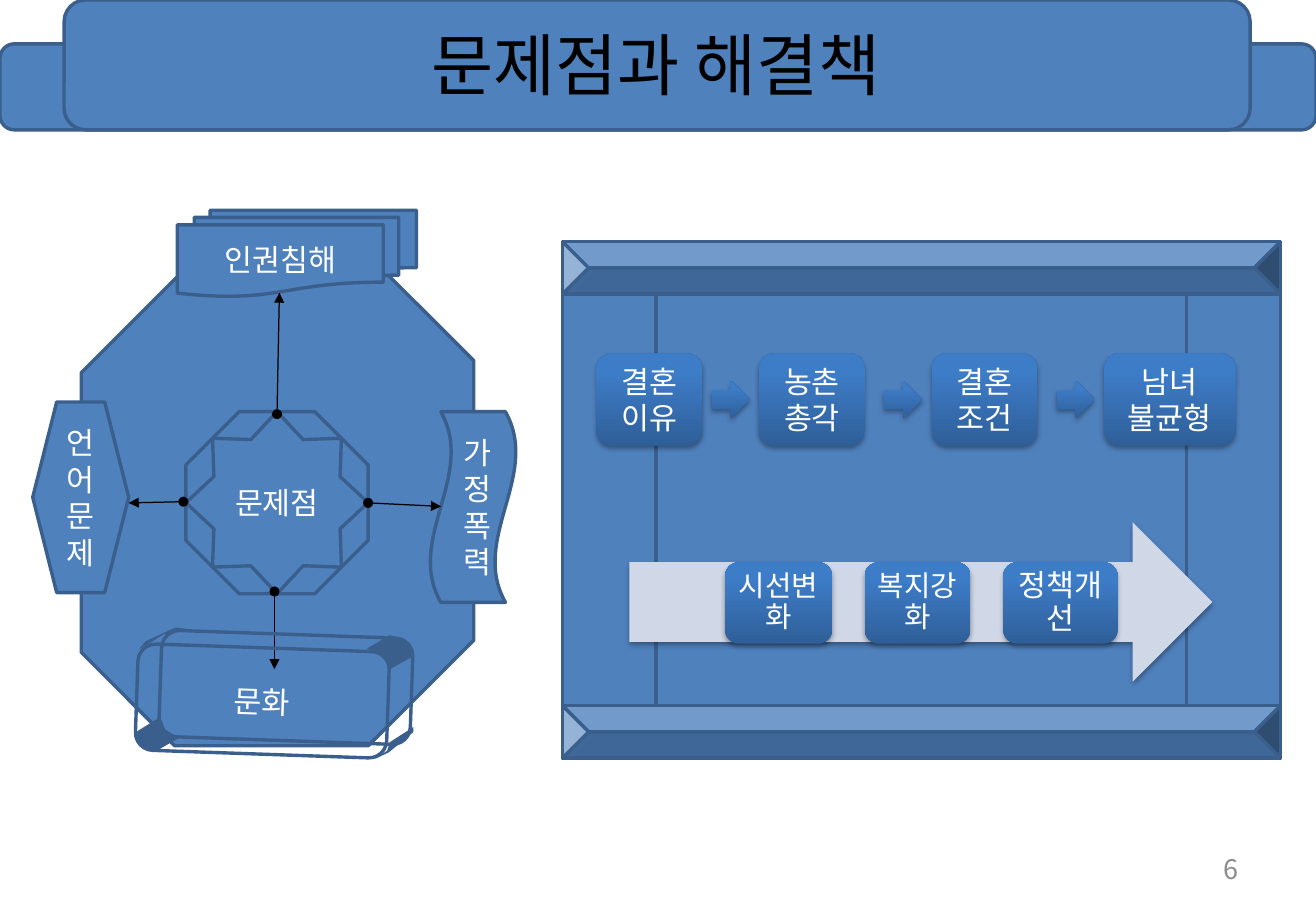
from dataclasses import dataclass
from typing import Optional

from lxml.etree import SubElement
from pptx import Presentation
from pptx.dml.color import RGBColor
from pptx.enum.shapes import MSO_CONNECTOR, MSO_SHAPE
from pptx.enum.text import MSO_ANCHOR, PP_ALIGN
from pptx.oxml.ns import qn
from pptx.shapes.autoshape import Shape
from pptx.shapes.shapetree import SlideShapes
from pptx.util import Pt


@dataclass(frozen=True)
class Theme:
    font: str = "Noto Sans CJK KR"
    blue: str = "4F81BD"
    edge: str = "3A5F8C"
    card_dark: str = "2F5F99"
    card_light: str = "3D7CC7"
    pale: str = "D0D8E8"
    black: str = "000000"
    white: str = "FFFFFF"
    grey: str = "8C8C8C"
    title_size: float = 40
    body_size: float = 18
    small_size: float = 17
    number_size: float = 16
    edge_width: float = 2
    arrow_width: float = 0.75


@dataclass(frozen=True)
class Box:
    left: float
    top: float
    width: float
    height: float


@dataclass(frozen=True)
class Block:
    kind: MSO_SHAPE
    box: Box
    text: str = ""
    adjustments: tuple[float, ...] = ()
    rotation: float = 0
    vertical: Optional[str] = None
    filled: bool = True


@dataclass(frozen=True)
class Card:
    left: float
    width: float
    text: str
    size: float = 18


THEME = Theme()
BANNER = Box(38, 0, 703, 77)
STEP_TOP, STEP_HEIGHT = 209.5, 54.7
REMEDY_TOP, REMEDY_HEIGHT = 333.4, 48.2
STEP_ARROW = 22.5
PANEL = Box(333.4, 143.3, 425.5, 306)
BEAM_HEIGHT = 31

PROBLEM_BLOCKS = (
    Block(MSO_SHAPE.ROUNDED_RECTANGLE, Box(0, 26, 780, 51)),
    Block(MSO_SHAPE.ROUNDED_RECTANGLE, BANNER),
    Block(MSO_SHAPE.SNIP_2_DIAG_RECTANGLE, Box(48.2, 158.4, 232.6, 283.7),
          adjustments=(0.269, 0.238)),
    Block(MSO_SHAPE.HEXAGON, Box(19.4, 238.3, 56.9, 113), "언어문제"),
    Block(MSO_SHAPE.FLOWCHART_MULTIDOCUMENT, Box(105.1, 124.6, 141.8, 51.1), "인권침해"),
    Block(MSO_SHAPE.WAVE, Box(223.9, 275, 113, 51.1), "가정폭력",
          rotation=90, vertical="vert270"),
    Block(MSO_SHAPE.OCTAGON, Box(110.2, 244, 108, 108)),
    Block(MSO_SHAPE.STAR_8_POINT, Box(110.2, 244, 108, 108), "문제점"),
)
PROBLEM_ARROWS = (
    ((164.2, 245.5), (165.6, 173.5)),
    ((108.7, 297.4), (76.3, 298.1)),
    ((218.2, 298.1), (261.4, 300.2)),
    ((162.7, 350.6), (162.7, 396.7)),
)
CULTURE_FRAMES = (
    Block(MSO_SHAPE.ROUNDED_RECTANGLE, Box(95, 376, 149, 63), rotation=2, filled=False),
    Block(MSO_SHAPE.ROUNDED_RECTANGLE, Box(81, 384, 149, 63), "문화", rotation=2, filled=False),
)
CULTURE_CORNERS = (
    ((217.5, 384.5), (231, 376.5), (240, 379.5), (245, 389), (230.5, 397), (227.5, 389)),
    ((80.5, 434), (95, 425), (98, 432.5), (106, 437.5), (92, 445.5), (83.5, 442)),
    ((222, 450), (230.5, 446), (245, 434), (245, 431), (231, 440), (229.5, 445)),
    ((82, 385), (86.5, 380), (104, 372), (112.5, 373), (97, 376), (89, 381)),
)
PANEL_BLOCKS = (
    Block(MSO_SHAPE.RECTANGLE, PANEL),
    Block(MSO_SHAPE.RECTANGLE, Box(388.8, 144, 314.6, 304)),
    *(Block(MSO_SHAPE.BEVEL, Box(PANEL.left, top, PANEL.width, BEAM_HEIGHT), adjustments=(0.5,))
      for top in (PANEL.top, PANEL.top + PANEL.height - BEAM_HEIGHT)),
)
REMEDIES = (
    Card(429.8, 63.4, "시선변화", THEME.small_size),
    Card(512.6, 62.6, "복지강화", THEME.small_size),
    Card(594.7, 67.7, "정책개선"),
)
STEPS = (
    Card(353.5, 62.6, "결혼\n이유"),
    Card(450, 62.6, "농촌\n총각"),
    Card(552.2, 62.6, "결혼\n조건"),
    Card(654.5, 77.8, "남녀\n불균형"),
)


def color(value: str) -> RGBColor:
    return RGBColor.from_string(value)


def write(shape: Shape, text: str, size: float = THEME.body_size, ink: str = THEME.white,
          align: PP_ALIGN = PP_ALIGN.CENTER, spacing: float = 1.0) -> None:
    frame = shape.text_frame
    frame.word_wrap = True
    frame.vertical_anchor = MSO_ANCHOR.MIDDLE
    for index, line in enumerate(text.split("\n")):
        paragraph = frame.add_paragraph() if index else frame.paragraphs[0]
        paragraph.alignment = align
        paragraph.line_spacing = spacing
        run = paragraph.add_run()
        run.text = line
        run.font.size = Pt(size)
        run.font.name = THEME.font
        run.font.color.rgb = color(ink)
        SubElement(run.font._element, qn("a:ea"), typeface=THEME.font)


def add_preset(shapes: SlideShapes, kind: MSO_SHAPE, box: Box) -> Shape:
    shape = shapes.add_shape(kind, Pt(box.left), Pt(box.top), Pt(box.width), Pt(box.height))
    shape.shadow.inherit = False
    return shape


def add_block(shapes: SlideShapes, block: Block) -> None:
    shape = add_preset(shapes, block.kind, block.box)
    for index, value in enumerate(block.adjustments):
        shape.adjustments[index] = value
    shape.rotation = block.rotation
    if block.filled:
        shape.fill.solid()
        shape.fill.fore_color.rgb = color(THEME.blue)
    else:
        shape.fill.background()
    shape.line.color.rgb = color(THEME.edge)
    shape.line.width = Pt(THEME.edge_width)
    if block.text:
        write(shape, block.text)
    if block.vertical:
        shape.text_frame._txBody.bodyPr.set("vert", block.vertical)


def add_raised(shapes: SlideShapes, kind: MSO_SHAPE, box: Box, flat: Optional[str] = None) -> Shape:
    """Borderless shape with a soft shadow below; a gradient unless a flat colour is given."""
    shape = add_preset(shapes, kind, box)
    shape.line.fill.background()
    if flat:
        shape.fill.solid()
        shape.fill.fore_color.rgb = color(flat)
    else:
        shape.fill.gradient()
        shape.fill.gradient_angle = 90
        stops = zip(shape.fill.gradient_stops, (0, 0.8), (THEME.card_dark, THEME.card_light))
        for stop, position, tint in stops:
            stop.position = position
            stop.color.rgb = color(tint)
    effects = shape._element.spPr.find(qn("a:effectLst"))
    shadow = SubElement(effects, qn("a:outerShdw"), blurRad=str(Pt(3.1)), dist=str(Pt(1.8)),
                        dir="5400000", rotWithShape="0")
    shade = SubElement(shadow, qn("a:srgbClr"), val=THEME.black)
    SubElement(shade, qn("a:alpha"), val="35000")
    return shape


def add_problem_arrow(shapes: SlideShapes, start: tuple[float, float],
                      end: tuple[float, float]) -> None:
    arrow = shapes.add_connector(MSO_CONNECTOR.STRAIGHT, *(Pt(value) for value in (*start, *end)))
    arrow.line.color.rgb = color(THEME.black)
    arrow.line.width = Pt(THEME.arrow_width)
    outline = arrow.line._get_or_add_ln()
    SubElement(outline, qn("a:headEnd"), type="oval")
    SubElement(outline, qn("a:tailEnd"), type="triangle")
    SubElement(arrow._element.spPr, qn("a:effectLst"))


def add_corner(shapes: SlideShapes, points: tuple[tuple[float, float], ...]) -> None:
    start, *rest = [(Pt(x), Pt(y)) for x, y in points]
    outline = shapes.build_freeform(*start)
    outline.add_line_segments(rest, close=True)
    corner = outline.convert_to_shape()
    corner.shadow.inherit = False
    corner.fill.solid()
    corner.fill.fore_color.rgb = color(THEME.edge)
    corner.line.fill.background()


def add_label(shapes: SlideShapes, box: Box, text: str, size: float, ink: str,
              align: PP_ALIGN) -> None:
    label = shapes.add_textbox(Pt(box.left), Pt(box.top), Pt(box.width), Pt(box.height))
    write(label, text, size, ink, align)


def main() -> None:
    deck = Presentation()
    deck.slide_width, deck.slide_height = Pt(780), Pt(540)
    shapes = deck.slides.add_slide(deck.slide_layouts[6]).shapes

    for block in PROBLEM_BLOCKS:
        add_block(shapes, block)
    add_label(shapes, Box(38, -2, 702, 79), "문제점과 해결책", THEME.title_size, THEME.black,
              PP_ALIGN.CENTER)
    add_label(shapes, Box(558.7, 500.4, 182.2, 28.8), "6", THEME.number_size, THEME.grey,
              PP_ALIGN.RIGHT)
    for start, end in PROBLEM_ARROWS:
        add_problem_arrow(shapes, start, end)
    for corner in CULTURE_CORNERS:
        add_corner(shapes, corner)
    for block in CULTURE_FRAMES + PANEL_BLOCKS:
        add_block(shapes, block)

    add_raised(shapes, MSO_SHAPE.RIGHT_ARROW, Box(373, 309.6, 345.6, 94.5), THEME.pale)
    for remedy in REMEDIES:
        card = add_raised(shapes, MSO_SHAPE.ROUNDED_RECTANGLE,
                          Box(remedy.left, REMEDY_TOP, remedy.width, REMEDY_HEIGHT))
        frame = card.text_frame
        frame.margin_left = frame.margin_right = frame.margin_top = frame.margin_bottom = Pt(5)
        write(card, remedy.text, remedy.size, spacing=0.9)

    for step in STEPS:
        card = add_raised(shapes, MSO_SHAPE.ROUNDED_RECTANGLE,
                          Box(step.left, STEP_TOP, step.width, STEP_HEIGHT))
        write(card, step.text, step.size)
    for following in STEPS[1:]:
        add_raised(shapes, MSO_SHAPE.RIGHT_ARROW,
                   Box(following.left - 28.2, STEP_TOP + (STEP_HEIGHT - STEP_ARROW) / 2,
                       STEP_ARROW, STEP_ARROW))
    deck.save("out.pptx")


if __name__ == "__main__":
    main()
